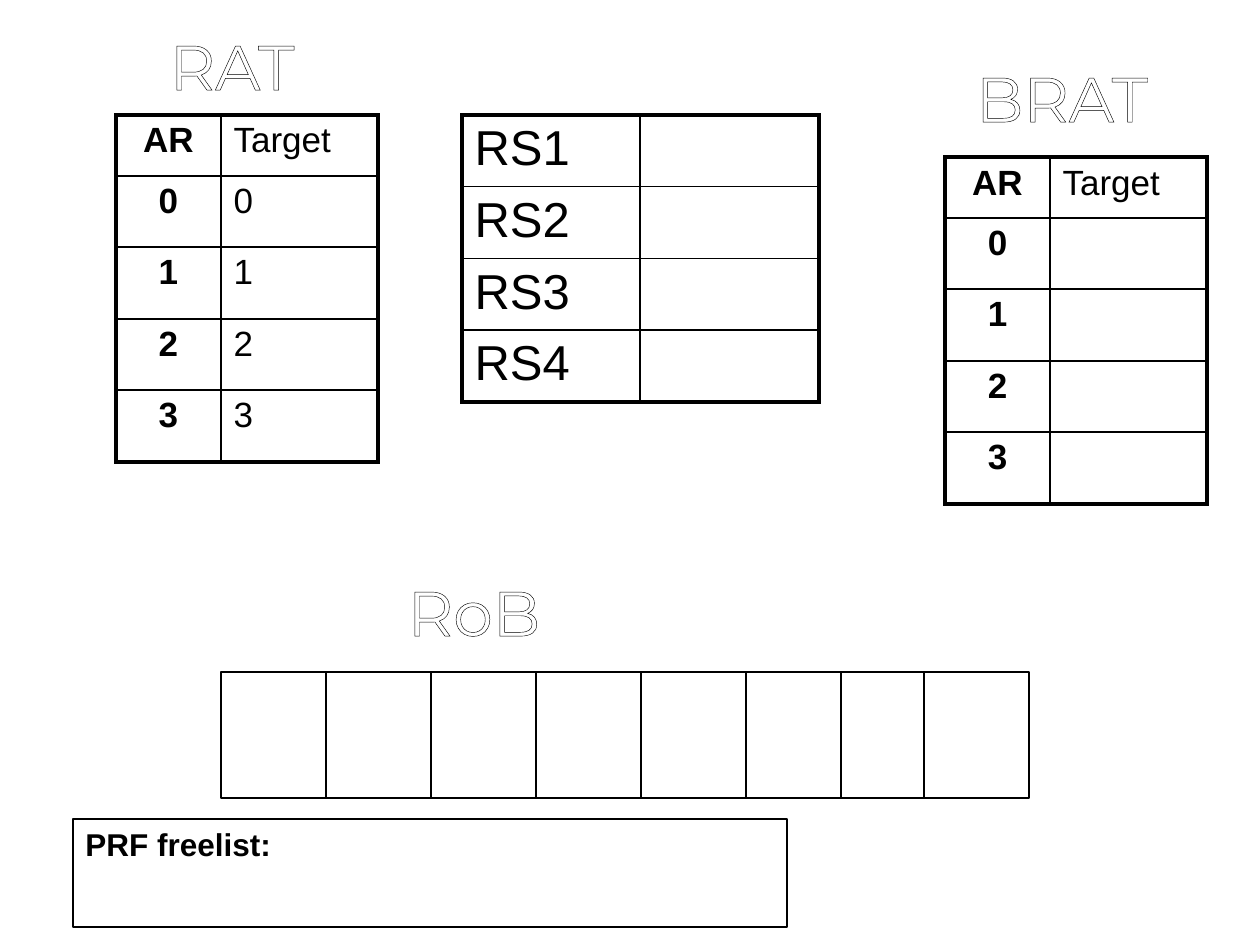
from itertools import accumulate

from lxml.etree import SubElement
from pptx import Presentation
from pptx.dml.color import RGBColor
from pptx.enum.shapes import MSO_CONNECTOR, MSO_SHAPE
from pptx.enum.text import MSO_ANCHOR, PP_ALIGN
from pptx.oxml import parse_xml
from pptx.oxml.ns import nsdecls, qn
from pptx.util import Pt


class Theme:
    ink, paper = "000000", "FFFFFF"
    body_font, heading_font = "Arial", "Montserrat"
    heading, station, entry, note = 36, 28, 20, 18
    thin, inner, outer = 0.75, 1, 2.25


PX = 914400 / 126  # EMU per pixel


def px(*values):
    return [round(v * PX) for v in values]


def write(tf, text, size, font=Theme.body_font, color=Theme.ink, bold=False,
          align=PP_ALIGN.LEFT, outline=None):
    p = tf.paragraphs[0]
    p.alignment = align
    r = p.add_run()
    r.text = text
    r.font.size, r.font.name, r.font.bold = Pt(size), font, bold
    r.font.color.rgb = RGBColor.from_string(color)
    if outline:
        r.font._element.insert(0, parse_xml(
            f'<a:ln {nsdecls("a")} w="{Pt(Theme.thin)}"><a:solidFill>'
            f'<a:srgbClr val="{outline}"/></a:solidFill></a:ln>'))


prs = Presentation()
prs.slide_width, prs.slide_height = px(1260, 945)
slide = prs.slides.add_slide(prs.slide_layouts[6])
shapes = slide.shapes
ink = RGBColor.from_string(Theme.ink)

# Reorder buffer strip and freelist box
boxes = []
for frame in [(221, 672, 808, 126), (73, 819, 714, 108)]:
    sp = shapes.add_shape(MSO_SHAPE.RECTANGLE, *px(*frame))
    sp.shadow.inherit = False
    sp.fill.background()
    sp.line.color.rgb = ink
    sp.line.width = Pt(Theme.thin)
    boxes.append(sp)
tf = boxes[1].text_frame
tf.word_wrap = True
tf.vertical_anchor = MSO_ANCHOR.TOP
write(tf, "PRF freelist:", Theme.note, bold=True)

# Reorder buffer dividers
slot_widths = [105] * 5 + [95, 83]
for x in list(accumulate(slot_widths, initial=221))[1:]:
    line = shapes.add_connector(MSO_CONNECTOR.STRAIGHT, *px(x, 672, x, 798))
    line.line.color.rgb = ink
    line.line.width = Pt(Theme.thin)
    SubElement(line._element.spPr, qn("a:effectLst"))

# Outlined headings, without side margins so that each fits on one line
for text, x, y in [("RAT", 136, 21), ("BRAT", 966, 53), ("RoB", 378, 567)]:
    tf = shapes.add_textbox(*px(x, y, 192, 89)).text_frame
    tf.word_wrap = False
    tf.margin_left = tf.margin_right = 0
    write(tf, text, Theme.heading, Theme.heading_font, Theme.paper,
          align=PP_ALIGN.CENTER, outline=Theme.ink)

# Tables: left, top, column widths, row heights, text size, key column, rows
alias_cols, alias_rows = [105, 157], [61, 71, 72, 71, 72]
stations = [(f"RS{n}", "") for n in range(1, 5)]
rat = [("AR", "Target")] + [(str(n), str(n)) for n in range(4)]
brat = [("AR", "Target")] + [(str(n), "") for n in range(4)]
tables = [
    (462, 115, [178, 179], [71, 72, 71, 72], Theme.station, False, stations),
    (116, 115, alias_cols, alias_rows, Theme.entry, True, rat),
    (945, 157, alias_cols, alias_rows, Theme.entry, True, brat),
]
for x, y, cols, heights, size, keyed, rows in tables:
    table = shapes.add_table(len(rows), len(cols),
                             *px(x, y, sum(cols), sum(heights))).table
    table.first_row = table.horz_banding = False
    for col, width in zip(table.columns, px(*cols)):
        col.width = width
    for row, height in zip(table.rows, px(*heights)):
        row.height = height
    for i, row in enumerate(rows):
        for j, text in enumerate(row):
            cell = table.cell(i, j)
            if text:
                is_key = keyed and j == 0
                write(cell.text_frame, text, size, bold=is_key,
                      align=PP_ALIGN.CENTER if is_key else PP_ALIGN.LEFT)
            # Heavy frame around the table, light rules inside
            edges = {"L": j == 0, "R": j == len(cols) - 1,
                     "T": i == 0, "B": i == len(rows) - 1}
            tcPr = cell._tc.get_or_add_tcPr()
            for side, on_frame in edges.items():
                weight = Theme.outer if on_frame else Theme.inner
                ln = SubElement(tcPr, qn(f"a:ln{side}"), w=str(Pt(weight)))
                fill = SubElement(ln, qn("a:solidFill"))
                SubElement(fill, qn("a:srgbClr"), val=Theme.ink)
            cell.fill.background()

prs.save("out.pptx")
